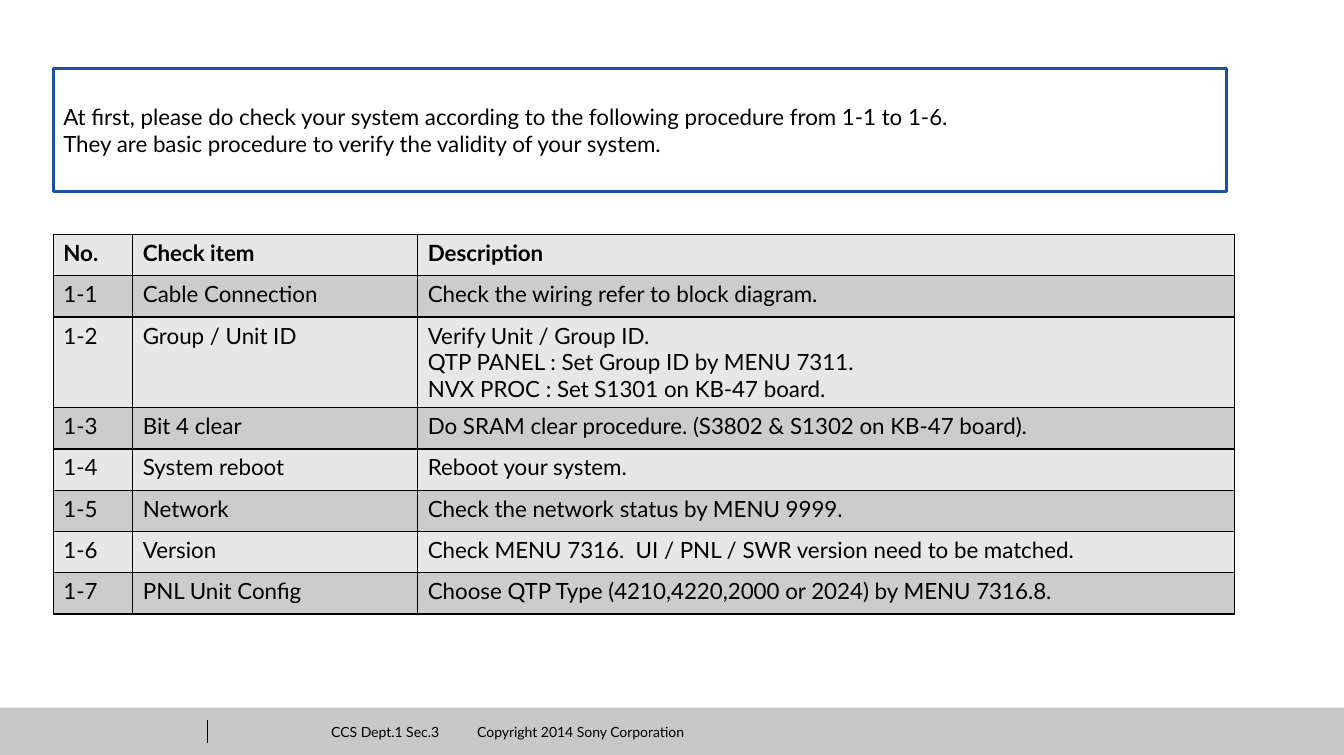
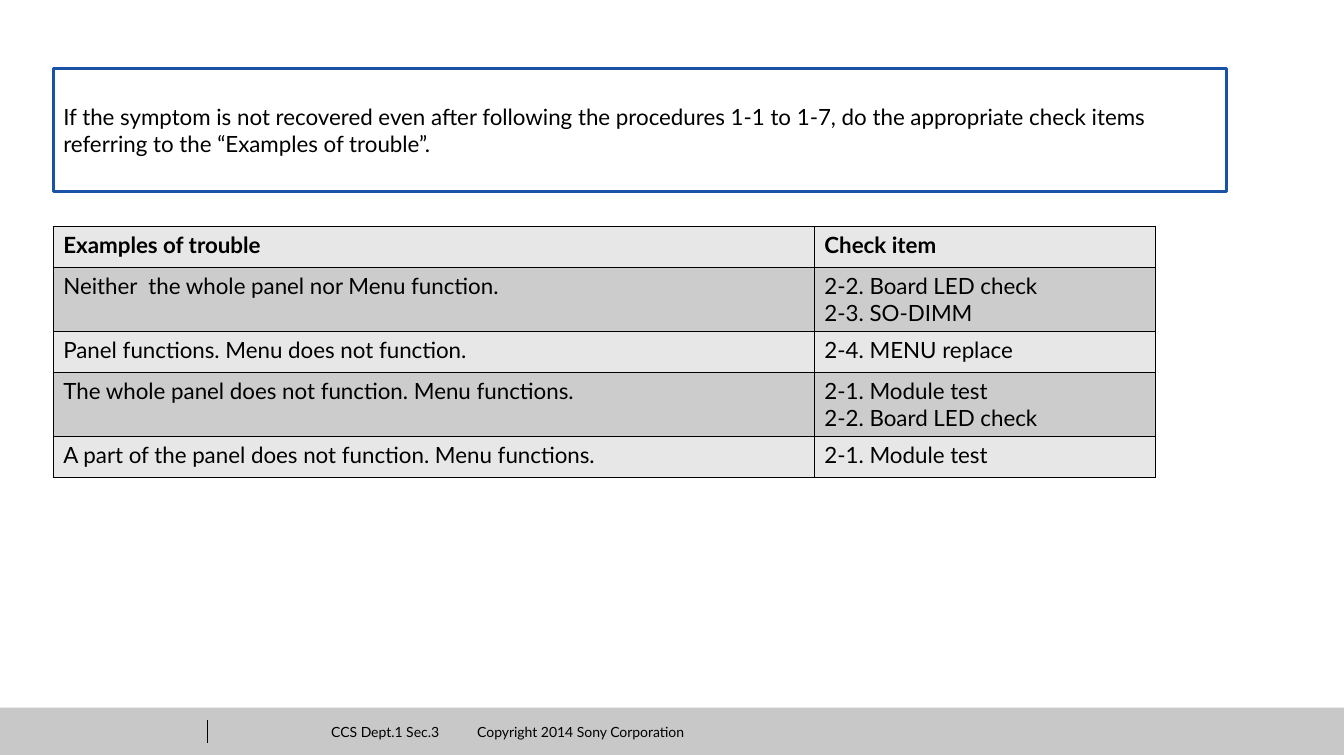
from lxml.etree import SubElement
from pptx import Presentation
from pptx.dml.color import RGBColor
from pptx.enum.shapes import MSO_CONNECTOR, MSO_SHAPE
from pptx.enum.text import MSO_ANCHOR, PP_ALIGN
from pptx.oxml import parse_xml
from pptx.oxml.ns import nsdecls, qn
from pptx.util import Inches, Pt

COLORS = {
    "ink": "000000",
    "paper": "FFFFFF",
    "frame": "1952A6",
    "band": "C8C8C8",
    "light": "E7E7E7",
    "dark": "CCCCCC",
}
FONT = "Lato"
WIDTH, HEIGHT = 13.35, 7.5
LEFT = 0.53
ROW = 0.41


def color(name):
    return RGBColor.from_string(COLORS[name])


class Deck:
    def __init__(self):
        self.prs = Presentation()
        self.prs.slide_width = Inches(WIDTH)
        self.prs.slide_height = Inches(HEIGHT)
        self.slide = None

    def page(self):
        self.slide = self.prs.slides.add_slide(self.prs.slide_layouts[6])
        self.box(0, 7.03, WIDTH, 0.47, "band")
        self.rule(2.06, 7.15, 7.38)
        self.footer("CCS Dept.1 Sec.3\tCopyright 2014 Sony Corporation")

    def style(self, frame, text, size=16, bold=False):
        frame.text = text
        for para in frame.paragraphs:
            para.alignment = PP_ALIGN.LEFT
            for run in para.runs:
                run.font.name = FONT
                run.font.size = Pt(size)
                run.font.bold = bold
                run.font.color.rgb = color("ink")

    def box(self, x, y, w, h, fill, line=None):
        shape = self.slide.shapes.add_shape(
            MSO_SHAPE.RECTANGLE, Inches(x), Inches(y), Inches(w), Inches(h))
        shape.shadow.inherit = False
        shape.fill.solid()
        shape.fill.fore_color.rgb = color(fill)
        if line:
            shape.line.color.rgb = color(line)
            shape.line.width = Pt(2)
        else:
            shape.line.fill.background()
        return shape

    def rule(self, x, top, end):
        line = self.slide.shapes.add_connector(
            MSO_CONNECTOR.STRAIGHT, Inches(x), Inches(top), Inches(x), Inches(end))
        line.line.color.rgb = color("ink")
        line.line.width = Pt(0.25)
        SubElement(line.element.spPr, qn("a:effectLst"))

    def footer(self, text):
        label = self.slide.shapes.add_textbox(
            Inches(3.29), Inches(7.15), Inches(5.31), Inches(0.24))
        frame = label.text_frame
        frame.word_wrap = True
        frame.vertical_anchor = MSO_ANCHOR.MIDDLE
        frame.margin_left = frame.margin_right = 0
        frame.margin_top = frame.margin_bottom = 0
        self.style(frame, text, 10)
        props = frame.paragraphs[0]._p.get_or_add_pPr()
        tabs = SubElement(props, qn("a:tabLst"))
        SubElement(tabs, qn("a:tab"), pos=str(Inches(1.45)), algn="l")

    def notice(self, text):
        shape = self.box(LEFT, 0.68, 11.65, 1.22, "paper", "frame")
        shape.text_frame.word_wrap = True
        shape.text_frame.vertical_anchor = MSO_ANCHOR.MIDDLE
        self.style(shape.text_frame, text)

    def border(self, cell):
        props = cell._tc.get_or_add_tcPr()
        for side in "LRTB":
            props.append(parse_xml(
                f'<a:ln{side} {nsdecls("a")} w="{Pt(1)}"><a:solidFill>'
                f'<a:srgbClr val="{COLORS["ink"]}"/></a:solidFill></a:ln{side}>'))

    def table(self, top, widths, rows):
        table = self.slide.shapes.add_table(
            len(rows), len(widths), Inches(LEFT), Inches(top),
            Inches(sum(widths)), Inches(ROW * len(rows))).table
        table.horz_banding = False
        for col, width in zip(table.columns, widths):
            col.width = Inches(width)
        for r, row in enumerate(rows):
            table.rows[r].height = Inches(ROW)
            for c, text in enumerate(row):
                cell = table.cell(r, c)
                self.border(cell)
                cell.fill.solid()
                cell.fill.fore_color.rgb = color("dark" if r % 2 else "light")
                self.style(cell.text_frame, text, bold=r == 0)


def main():
    deck = Deck()

    deck.page()
    deck.table(2.33, [0.79, 2.83, 8.11], [
        ("No.", "Check item", "Description"),
        ("1-1", "Cable Connection", "Check the wiring refer to block diagram."),
        ("1-2", "Group / Unit ID",
         "Verify Unit / Group ID.\n"
         "QTP PANEL : Set Group ID by MENU 7311.\n"
         "NVX PROC : Set S1301 on KB-47 board."),
        ("1-3", "Bit 4 clear",
         "Do SRAM clear procedure. (S3802 & S1302 on KB-47 board)."),
        ("1-4", "System reboot", "Reboot your system."),
        ("1-5", "Network", "Check the network status by MENU 9999."),
        ("1-6", "Version",
         "Check MENU 7316.  UI / PNL / SWR version need to be matched."),
        ("1-7", "PNL Unit Config",
         "Choose QTP Type (4210,4220,2000 or 2024) by MENU 7316.8."),
    ])
    deck.notice(
        "At first, please do check your system according to the following "
        "procedure from 1-1 to 1-6.\n"
        "They are basic procedure to verify the validity of your system.")

    deck.page()
    deck.table(2.25, [7.56, 3.39], [
        ("Examples of trouble", "Check item"),
        ("Neither  the whole panel nor Menu function.",
         "2-2. Board LED check\n2-3. SO-DIMM"),
        ("Panel functions. Menu does not function.", "2-4. MENU replace"),
        ("The whole panel does not function. Menu functions.",
         "2-1. Module test\n2-2. Board LED check"),
        ("A part of the panel does not function. Menu functions.",
         "2-1. Module test"),
    ])
    deck.notice(
        "If the symptom is not recovered even after following the procedures "
        "1-1 to 1-7, do the appropriate check items referring to the "
        "“Examples of trouble”.")

    deck.prs.save("out.pptx")


if __name__ == "__main__":
    main()
